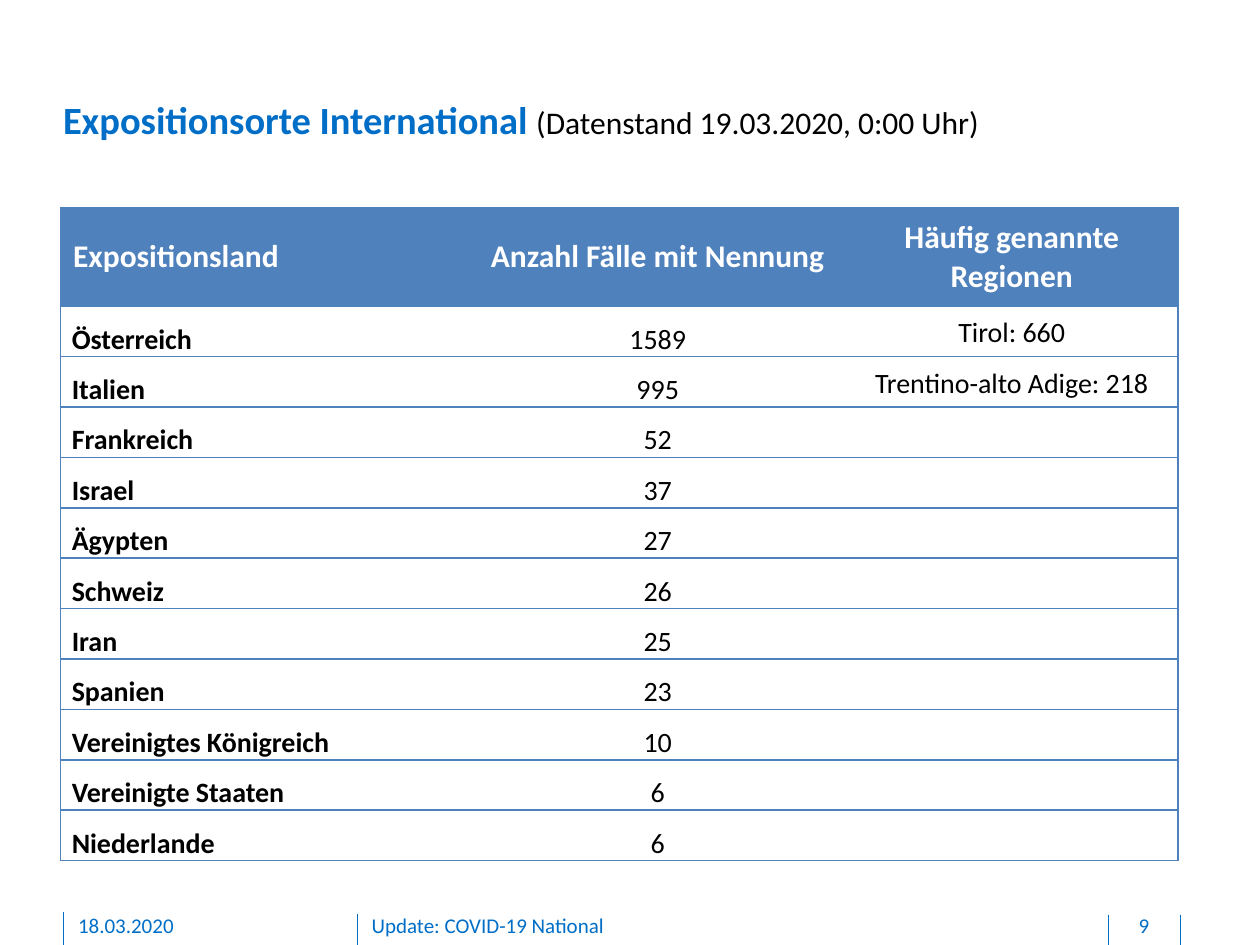
from dataclasses import dataclass

import pptx
import pptx.dml.color
import pptx.enum.shapes
import pptx.enum.text
import pptx.oxml.ns
import pptx.util
from lxml import etree

Inches = pptx.util.Inches
Pt = pptx.util.Pt
ALIGN = pptx.enum.text.PP_ALIGN
ANCHOR = pptx.enum.text.MSO_ANCHOR


@dataclass(frozen=True)
class Theme:
    font: str = "Calibri"
    brand: str = "006EC7"
    table: str = "4F81BD"
    white: str = "FFFFFF"
    black: str = "000000"
    title_size: int = 22
    header_size: int = 18
    body_size: int = 16
    footer_size: int = 12


THEME = Theme()

HEADERS = ["Expositionsland", "Anzahl Fälle mit Nennung", "Häufig genannte Regionen"]
COUNTRIES = [
    ("Österreich", "1589", "Tirol: 660"),
    ("Italien", "995", "Trentino-alto Adige: 218"),
    ("Frankreich", "52", ""),
    ("Israel", "37", ""),
    ("Ägypten", "27", ""),
    ("Schweiz", "26", ""),
    ("Iran", "25", ""),
    ("Spanien", "23", ""),
    ("Vereinigtes Königreich", "10", ""),
    ("Vereinigte Staaten", "6", ""),
    ("Niederlande", "6", ""),
]
COLUMN_WIDTHS = [3.25, 2.98, 2.64]
HEADER_HEIGHT, ROW_HEIGHT = 0.78, 0.4


def rgb(color):
    return pptx.dml.color.RGBColor.from_string(color)


def apply(target, formats):
    for name, value in formats.items():
        setattr(target, name, value)


def add_run(paragraph, text, size, color, bold=False):
    run = paragraph.add_run()
    run.text = text
    apply(run.font, {"name": THEME.font, "size": Pt(size), "bold": bold})
    run.font.color.rgb = rgb(color)


def add_text(slide, left, top, width, height, runs, align=ALIGN.LEFT, bottom=0):
    """Add a one-paragraph text box; each run is (text, size, color, bold)."""
    frame = slide.shapes.add_textbox(*map(Inches, (left, top, width, height))).text_frame
    apply(frame, {"word_wrap": True, "margin_left": 0, "margin_right": 0,
                  "margin_top": 0, "margin_bottom": Inches(bottom)})
    paragraph = frame.paragraphs[0]
    paragraph.alignment = align
    for run in runs:
        add_run(paragraph, *run)


def add_divider(slide, x, top):
    divider = slide.shapes.add_connector(
        pptx.enum.shapes.MSO_CONNECTOR.STRAIGHT,
        Inches(x), Inches(top), Inches(x), Inches(7.5))
    divider.line.color.rgb = rgb(THEME.brand)
    divider.line.width = Pt(0.5)
    etree.SubElement(divider._element.spPr, pptx.oxml.ns.qn("a:effectLst"))


def set_borders(cell, visible_sides):
    properties = cell._tc.get_or_add_tcPr()
    for side in "LRTB":
        line = etree.SubElement(properties, pptx.oxml.ns.qn(f"a:ln{side}"), w=str(Pt(1)))
        if side in visible_sides:
            fill = etree.SubElement(line, pptx.oxml.ns.qn("a:solidFill"))
            etree.SubElement(fill, pptx.oxml.ns.qn("a:srgbClr"), val=THEME.table)
        else:
            etree.SubElement(line, pptx.oxml.ns.qn("a:noFill"))


def fill_cell(cell, text, column, is_header):
    is_country, is_region = column == 0, column == 2
    set_borders(cell, "TB" + ("L" if is_country else "R" if is_region else ""))
    cell.fill.solid()
    cell.fill.fore_color.rgb = rgb(THEME.table if is_header else THEME.white)
    cell.vertical_anchor = ANCHOR.MIDDLE if is_header else ANCHOR.BOTTOM
    if not is_header:
        side = Inches(0.1 if is_region else 0)
        apply(cell, {"margin_left": Inches(0.09) if is_country else side,
                     "margin_right": side, "margin_top": 0,
                     "margin_bottom": Inches(0.05 if is_region else 0)})
    paragraph = cell.text_frame.paragraphs[0]
    paragraph.alignment = ALIGN.LEFT if is_country else ALIGN.CENTER
    if text:
        add_run(paragraph, text,
                THEME.header_size if is_header else THEME.body_size,
                THEME.white if is_header else THEME.black,
                bold=is_header or is_country)


def add_country_table(slide, left, top):
    rows = [HEADERS, *COUNTRIES]
    heights = [HEADER_HEIGHT] + [ROW_HEIGHT] * len(COUNTRIES)
    table = slide.shapes.add_table(
        len(rows), len(HEADERS), Inches(left), Inches(top),
        Inches(sum(COLUMN_WIDTHS)), Inches(sum(heights))).table
    table.horz_banding = False
    for column, width in zip(table.columns, COLUMN_WIDTHS):
        column.width = Inches(width)
    for row, height in zip(table.rows, heights):
        row.height = Inches(height)
    for row_index, texts in enumerate(rows):
        for column, text in enumerate(texts):
            fill_cell(table.cell(row_index, column), text, column, row_index == 0)


def add_footer(slide):
    for x, top in [(0.5, 7.24), (2.84, 7.25), (8.8, 7.26), (9.37, 7.26)]:
        add_divider(slide, x, top)
    for text, left, width, align in [
        ("18.03.2020", 0.62, 2.03, ALIGN.LEFT),
        ("Update: COVID-19 National", 2.95, 5.67, ALIGN.LEFT),
        ("9", 8.81, 0.54, ALIGN.CENTER),
    ]:
        add_text(slide, left, 7.24, width, 0.21,
                 [(text, THEME.footer_size, THEME.brand)], align, bottom=0.05)


def main():
    presentation = pptx.Presentation()
    apply(presentation, {"slide_width": Inches(10), "slide_height": Inches(7.5)})
    slide = presentation.slides.add_slide(presentation.slide_layouts[6])
    add_text(slide, 0.5, 0.76, 8.85, 0.37, [
        ("Expositionsorte International ", THEME.title_size, THEME.brand, True),
        ("(Datenstand 19.03.2020, 0:00 Uhr)", THEME.header_size, THEME.black),
    ])
    add_country_table(slide, 0.48, 1.65)
    add_footer(slide)
    presentation.save("out.pptx")


if __name__ == "__main__":
    main()
